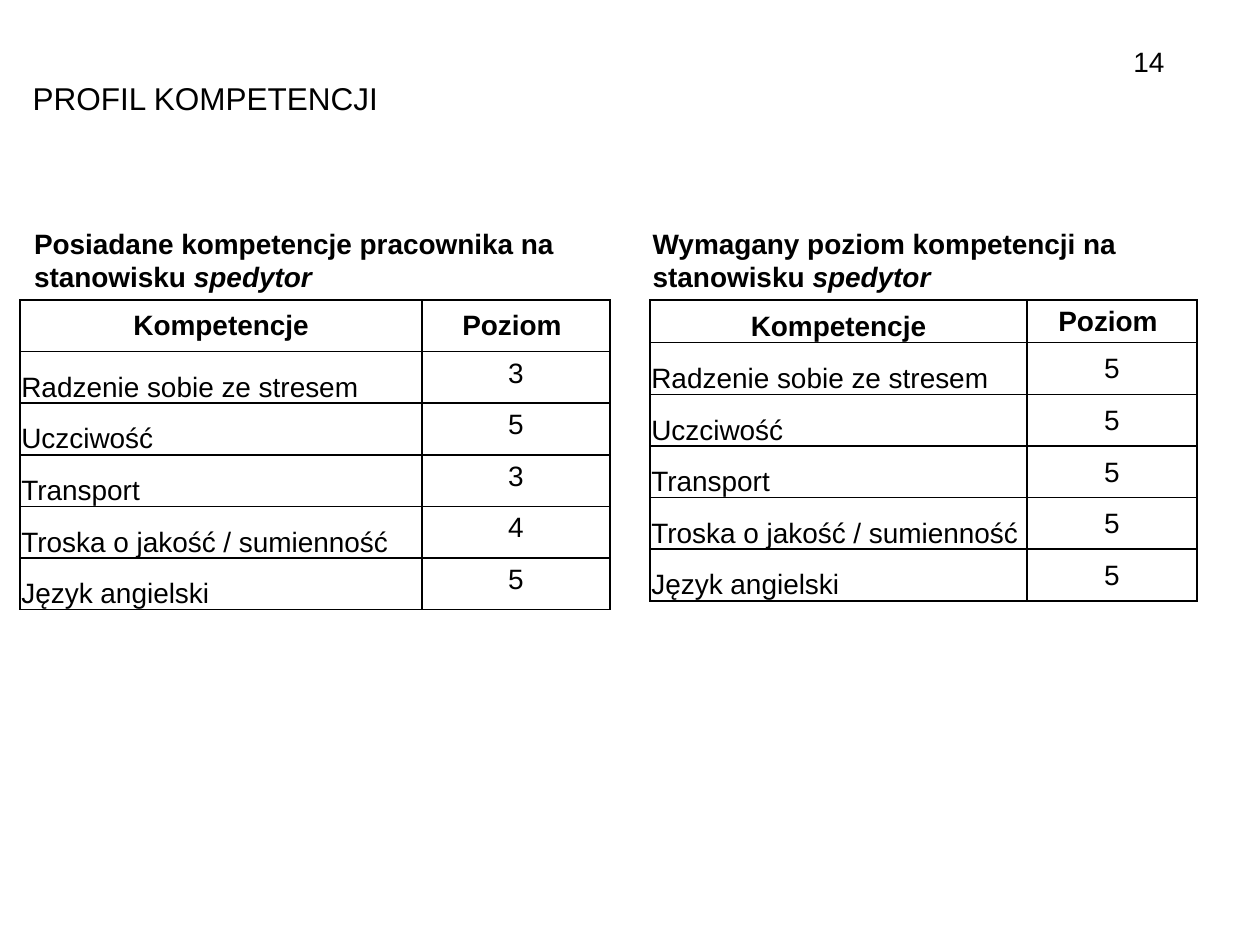
import pptx
import pptx.util
import pptx.dml.color
import pptx.enum.text
import pptx.oxml
import pptx.oxml.ns
from dataclasses import dataclass

Inches = pptx.util.Inches
Pt = pptx.util.Pt
Align = pptx.enum.text.PP_ALIGN
Anchor = pptx.enum.text.MSO_ANCHOR


@dataclass(frozen=True)
class Theme:
    face: str = "Arial"
    ink: str = "000000"
    title: int = 18
    body: int = 16
    line: int = 1


THEME = Theme()
SKILLS = [
    "Radzenie sobie ze stresem",
    "Uczciwość",
    "Transport",
    "Troska o jakość / sumienność",
    "Język angielski",
]


def style(font, size, bold=False):
    font.name = THEME.face
    font.size = Pt(size)
    font.bold = bold
    font.color.rgb = pptx.dml.color.RGBColor.from_string(THEME.ink)


def place(shape, box, anchor):
    shape.left, shape.top, shape.width, shape.height = map(Inches, box)
    frame = shape.text_frame
    frame.word_wrap = True
    frame.auto_size = pptx.enum.text.MSO_AUTO_SIZE.NONE
    frame.vertical_anchor = anchor
    return frame.paragraphs[0]


def write(shape, box, text, size, align, anchor):
    para = place(shape, box, anchor)
    para.text = text
    para.alignment = align
    style(para.font, size)


def head(shape, box, text, role):
    para = place(shape, box, Anchor.BOTTOM)
    para.alignment = Align.LEFT
    para.space_before = Pt(0)
    para.add_run().text = text
    last = para.add_run()
    last.text = role
    last.font.italic = True
    style(para.font, THEME.body, True)


def edge(cell):
    props = cell._tc.get_or_add_tcPr()
    for side in "LRTB":
        props.append(pptx.oxml.parse_xml(
            f'<a:ln{side} {pptx.oxml.ns.nsdecls("a")} w="{Pt(THEME.line)}">'
            f'<a:solidFill><a:srgbClr val="{THEME.ink}"/></a:solidFill></a:ln{side}>'))
    cell.fill.background()


def fill(cell, text, bold, align, anchor, tight):
    cell.text = text
    cell.vertical_anchor = anchor
    if tight:
        cell.margin_left = cell.margin_right = cell.margin_top = Inches(0.01)
        cell.margin_bottom = 0
    para = cell.text_frame.paragraphs[0]
    para.alignment = align
    style(para.font, THEME.body, bold)
    edge(cell)


def grid(slide, box, cols, top, step, marks, lead, mark, tight):
    rows = [("Kompetencje", "Poziom ")] + list(zip(SKILLS, marks))
    table = slide.shapes.add_table(len(rows), len(cols), *map(Inches, box)).table
    table.first_row = table.horz_banding = False
    for col, width in zip(table.columns, cols):
        col.width = Inches(width)
    for i, (skill, level) in enumerate(rows):
        first = i == 0
        table.rows[i].height = Inches(top if first else step)
        fill(table.cell(i, 0), skill, first,
             Align.CENTER if first else Align.LEFT,
             lead if first else Anchor.BOTTOM, True)
        fill(table.cell(i, 1), level, first, Align.CENTER,
             Anchor.MIDDLE if first else mark, tight)


def profile(deck):
    slide = deck.slides.add_slide(deck.slide_layouts[4])
    slots = {slot.placeholder_format.idx: slot for slot in slide.placeholders}
    for key in (2, 4):
        slots[key].element.getparent().remove(slots[key].element)
    write(slots[0], (0.16, 0.58, 8.12, 0.73), "PROFIL KOMPETENCJI",
          THEME.title, Align.LEFT, Anchor.TOP)
    head(slots[1], (0.17, 1.68, 4.68, 0.7),
         "Posiadane kompetencje pracownika na stanowisku ", "spedytor")
    grid(slide, (0.16, 2.38, 4.68, 2.43), (3.19, 1.49), 0.41, 0.41,
         "35345", Anchor.MIDDLE, Anchor.TOP, False)
    head(slots[3], (5.08, 1.68, 4.68, 0.7),
         "Wymagany poziom kompetencji na stanowisku ", "spedytor")
    page = (7, 0.23, 2.34, 0.52)
    write(slide.shapes.add_textbox(*map(Inches, page)), page, "14",
          THEME.body, Align.RIGHT, Anchor.MIDDLE)
    grid(slide, (5.16, 2.38, 4.34, 2.4), (2.99, 1.35), 0.34, 0.41,
         "55555", Anchor.BOTTOM, Anchor.MIDDLE, True)


def main():
    deck = pptx.Presentation()
    deck.slide_width, deck.slide_height = Inches(10), Inches(7.5)
    profile(deck)
    deck.save("out.pptx")


if __name__ == "__main__":
    main()
